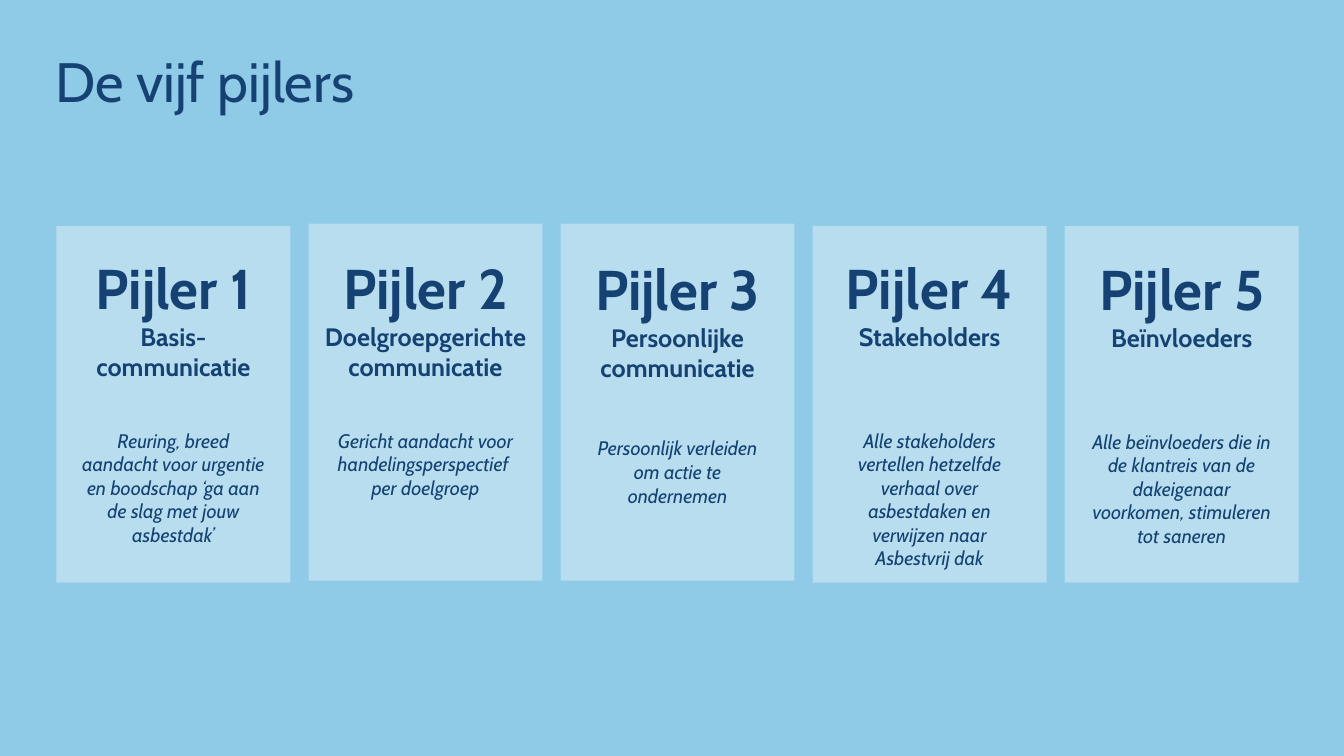
from lxml import etree
from pptx import Presentation
from pptx.dml.color import RGBColor
from pptx.enum.shapes import MSO_SHAPE
from pptx.enum.text import MSO_ANCHOR, MSO_AUTO_SIZE, PP_ALIGN
from pptx.oxml.ns import qn
from pptx.util import Inches, Pt

RECTANGLE = MSO_SHAPE.RECTANGLE
MIDDLE = MSO_ANCHOR.MIDDLE
GROW = MSO_AUTO_SIZE.SHAPE_TO_FIT_TEXT
CENTER = PP_ALIGN.CENTER
COLORS = {"background": "8FCAE7", "panel": "D2EAF5", "text": "154273"}
FONT = "Cabin"

FIRST_LEFT, PITCH = 0.56, 2.5
PANEL_WIDTH, PANEL_HEIGHT = 2.32, 3.54

# panel top, text top, text width, text height, subject, gap in points, explanation
PILLARS = [
    (2.24, 2.47, 2.05, 3.26, "Basis-communicatie", 33.6,
     "Reuring, breed aandacht voor urgentie en boodschap ‘ga aan de slag met jouw asbestdak’"),
    (2.22, 2.47, 2.22, 2.56, "Doelgroepgerichte communicatie", 33.6,
     "Gericht aandacht voor handelingsperspectief \nper doelgroep"),
    (2.22, 2.48, 2.05, 2.39, "Persoonlijke communicatie", 38.4,
     "Persoonlijk verleiden om actie te ondernemen"),
    (2.24, 2.47, 2.05, 2.79, "Stakeholders", 55.2,
     "Alle stakeholders vertellen hetzelfde verhaal over asbestdaken en verwijzen naar Asbestvrij dak"),
    (2.24, 2.48, 2.05, 3.26, "Beïnvloeders", 55.2,
     "Alle beïnvloeders die in de klantreis van de dakeigenaar voorkomen, stimuleren tot saneren"),
]


class PillarSlide:
    """Holds the style and the slide, and draws each kind of element."""

    def __init__(self, slide):
        self.slide = slide
        fill = slide.background.fill
        fill.solid()
        fill.fore_color.rgb = RGBColor.from_string(COLORS["background"])

    def style(self, paragraph, size, bold=False, italic=False):
        font = paragraph.font
        font.name, font.size = FONT, Pt(size)
        font.bold, font.italic = bold, italic
        font.color.rgb = RGBColor.from_string(COLORS["text"])

    def text_frame(self, left, top, width, height):
        box = self.slide.shapes.add_textbox(
            Inches(left), Inches(top), Inches(width), Inches(height))
        box.text_frame.word_wrap = True
        return box.text_frame

    def title(self, wording):
        frame = self.text_frame(0.45, 0.5, 11.71, 0.67)
        frame.vertical_anchor = MIDDLE
        heading = frame.paragraphs[0]
        heading.text = wording
        heading.line_spacing = 0.9
        self.style(heading, 39.6)

    def panel(self, left, top):
        panel = self.slide.shapes.add_shape(
            RECTANGLE, Inches(left), Inches(top),
            Inches(PANEL_WIDTH), Inches(PANEL_HEIGHT))
        panel.shadow.inherit = False
        panel.line.fill.background()
        panel.fill.solid()
        panel.fill.fore_color.rgb = RGBColor.from_string(COLORS["panel"])
        color = panel.fill._xPr.find(qn("a:solidFill"))[0]
        etree.SubElement(color, qn("a:alpha")).set("val", "60000")

    def pillar_text(self, left, top, width, height, name, subject, gap, explanation):
        frame = self.text_frame(left, top, width, height)
        frame.auto_size = GROW
        lines = [(name, 40, True, False), (subject, 18, True, False),
                 (explanation, 14, False, True)]
        for index, (wording, size, bold, italic) in enumerate(lines):
            paragraph = frame.add_paragraph() if index else frame.paragraphs[0]
            paragraph.text = wording
            paragraph.alignment = CENTER
            self.style(paragraph, size, bold, italic)
        paragraph.space_before = Pt(gap)


def main():
    presentation = Presentation()
    presentation.slide_width = Inches(13.33)
    presentation.slide_height = Inches(7.5)
    page = PillarSlide(presentation.slides.add_slide(presentation.slide_layouts[6]))
    page.title("De vijf pijlers")
    for index, (panel_top, top, width, height, subject, gap, explanation) in enumerate(PILLARS):
        left = FIRST_LEFT + index * PITCH
        page.panel(left, panel_top)
        text_left = left + (PANEL_WIDTH - width) / 2
        page.pillar_text(text_left, top, width, height,
                         f"Pijler {index + 1}", subject, gap, explanation)
    presentation.save("out.pptx")


if __name__ == "__main__":
    main()
